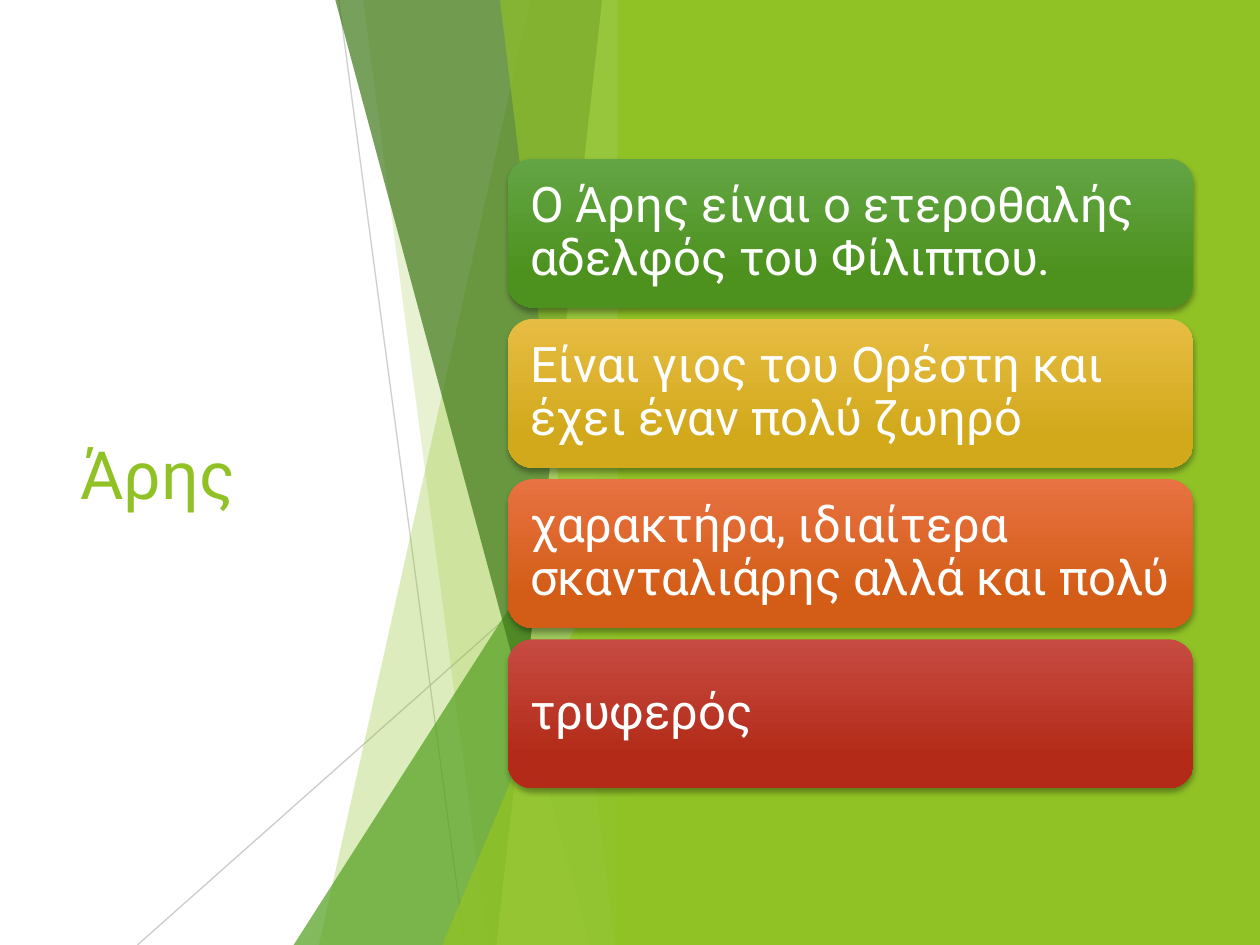
"""Build the slide about Άρης: a title, a faceted green panel and four cards."""
from dataclasses import dataclass

from pptx import Presentation
from pptx.dml.color import RGBColor
from pptx.enum.shapes import MSO_CONNECTOR as Link, MSO_SHAPE as Kind
from pptx.enum.text import MSO_ANCHOR as Anchor, PP_ALIGN as Align
from pptx.oxml import parse_xml
from pptx.oxml.ns import nsdecls, qn
from pptx.util import Cm, Pt


@dataclass
class Theme:
    font: str = "Roboto"
    head: int = 38
    body: int = 28
    lime: str = "90C226"
    green: str = "54A021"
    dark: str = "3F7819"
    pale: str = "C0E474"
    gray: str = "BFBFBF"
    white: str = "FFFFFF"
    cards: tuple = (("63A545", "4D921E"), ("E7BC43", "D2A91B"),
                    ("E87242", "D35D16"), ("C74B42", "B32B18"))


def fade(shape, share):
    color = next(shape._element.spPr.iter(qn("a:srgbClr")))
    color.append(parse_xml(f'<a:alpha {nsdecls("a")} val="{share * 1000}"/>'))


def style(para, size, color):
    para.alignment = Align.LEFT
    para.font.name = theme.font
    para.font.size = Pt(size)
    para.font.color.rgb = RGBColor.from_string(color)


theme = Theme()
deck = Presentation()
wide, high = Cm(25.4), Cm(19.05)
deck.slide_width, deck.slide_height = wide, high
slide = deck.slides.add_slide(deck.slide_layouts[5])
shapes = slide.shapes

title = shapes.title
title.left, title.top, title.width, title.height = Cm(1.37), Cm(3.84), Cm(7.39), Cm(11.38)
title.text_frame.text = "Άρης"
title.text_frame.vertical_anchor = Anchor.MIDDLE
style(title.text_frame.paragraphs[0], theme.head, theme.lime)

for x1, y1, x2, share in ((6.83, 0, 9.37, 75), (12.7, 10.24, 2.77, 80)):
    line = shapes.add_connector(Link.STRAIGHT, Cm(x1), Cm(y1), Cm(x2), high)
    line.line.color.rgb = RGBColor.from_string(theme.gray)
    line.line.width = Pt(0.75)
    fade(line, share)
    line._element.spPr.append(parse_xml(f'<a:effectLst {nsdecls("a")}/>'))

edge = Cm(12.7)
facets = (
    ("slant", 10.69, 6.43, theme.lime, 30),
    ("slant", 7.32, 9.83, theme.lime, 20),
    ("peak", 8.46, 5.92, theme.green, 72),
    ("slant", 6.76, 11.89, theme.dark, 70),
    ("slant", 12.14, 10.01, theme.pale, 70),
    ("slant", 10.08, 12.4, theme.lime, 65),
    ("peak", 9.98, 8.92, theme.lime, 80),
)
for form, top, foot, color, share in facets:
    if form == "peak":
        facet = shapes.add_shape(Kind.ISOSCELES_TRIANGLE, Cm(foot), Cm(top),
                                 edge - Cm(foot), high - Cm(top))
        facet.adjustments[0] = 1
    else:
        pen = shapes.build_freeform(Cm(top), 0)
        pen.add_line_segments([(edge, 0), (edge, high), (Cm(foot), high)])
        facet = pen.convert_to_shape()
    facet.shadow.inherit = False
    facet.fill.solid()
    facet.fill.fore_color.rgb = RGBColor.from_string(color)
    facet.line.fill.background()
    fade(facet, share)

panel = shapes.add_shape(Kind.RECTANGLE, Cm(12.45), 0, wide - Cm(12.45), high)
panel.shadow.inherit = False
panel.fill.solid()
panel.fill.fore_color.rgb = RGBColor.from_string(theme.lime)
panel.line.fill.background()

texts = (
    "Ο Άρης είναι ο ετεροθαλής αδελφός του Φίλιππου.",
    "Είναι γιος του Ορέστη και έχει έναν πολύ ζωηρό",
    "χαρακτήρα, ιδιαίτερα σκανταλιάρης αλλά και πολύ",
    "τρυφερός",
)
for row, (text, tones) in enumerate(zip(texts, theme.cards)):
    card = shapes.add_shape(Kind.ROUNDED_RECTANGLE, Cm(10.24), Cm(3.2 + 3.23 * row),
                            Cm(13.82), Cm(3))
    card.line.fill.background()
    card.fill.gradient()
    card.fill.gradient_angle = 270
    for stop, place, tone in zip(card.fill.gradient_stops, (0, 0.78), tones):
        stop.position = place
        stop.color.rgb = RGBColor.from_string(tone)
    card.shadow.inherit = False
    card._element.spPr.find(qn("a:effectLst")).append(parse_xml(
        f'<a:outerShdw {nsdecls("a")} blurRad="{Pt(3)}" dist="{Pt(2)}" dir="5400000" '
        'rotWithShape="0"><a:srgbClr val="000000"><a:alpha val="35000"/></a:srgbClr>'
        '</a:outerShdw>'))
    frame = card.text_frame
    frame.word_wrap = True
    frame.vertical_anchor = Anchor.MIDDLE
    frame.margin_left, frame.margin_right = Cm(0.3), Cm(0.2)
    frame.margin_top = frame.margin_bottom = Cm(0.3)
    frame.text = text
    para = frame.paragraphs[0]
    para.line_spacing = 0.9
    style(para, theme.body, theme.white)

deck.save("out.pptx")
